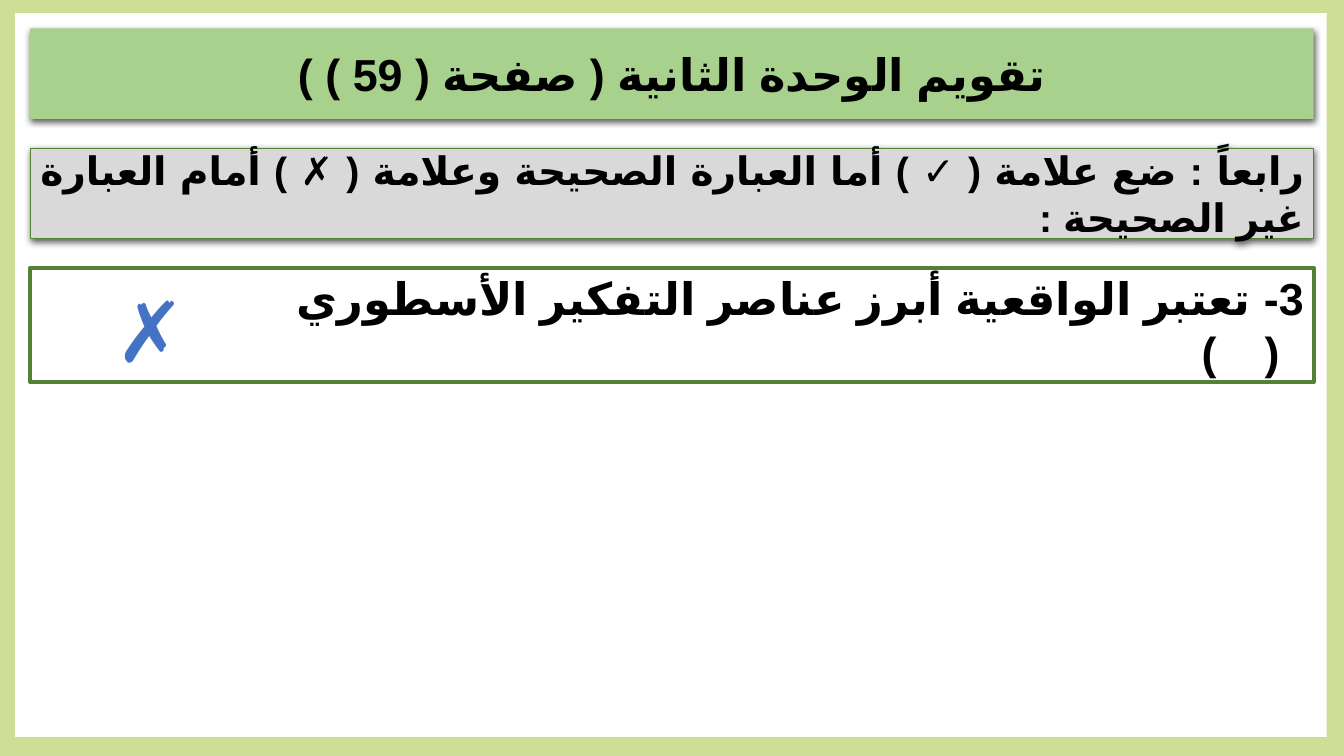
import pptx
import pptx.util
import pptx.dml.color
import pptx.enum.lang
import pptx.enum.shapes
import pptx.enum.text
import pptx.oxml
import pptx.oxml.ns

Pt = pptx.util.Pt
Align = pptx.enum.text.PP_ALIGN
HUES = {"frame": "D0DD96", "page": "FFFFFF", "title": "A9D18E", "task": "D9D9D9",
        "edge": "548235", "ink": "000000", "mark": "4472C4"}
SHADE = ('<a:effectLst %s><a:outerShdw blurRad="57150" dist="19050" dir="5400000" '
         'algn="ctr" rotWithShape="0"><a:srgbClr val="000000"><a:alpha val="63000"/>'
         '</a:srgbClr></a:outerShdw></a:effectLst>' % pptx.oxml.ns.nsdecls("a"))
TABS = '<a:tabLst %s>%s</a:tabLst>'
SCRIPT = '<a:cs %s typeface="Arial"/>' % pptx.oxml.ns.nsdecls("a")


def hue(name):
    """Return the named colour."""
    return pptx.dml.color.RGBColor.from_string(HUES[name])


def panel(slide, box, fill, edge=0, shade=False):
    """Draw a filled rectangle with an optional edge and shadow."""
    kind = pptx.enum.shapes.MSO_SHAPE.RECTANGLE
    shape = slide.shapes.add_shape(kind, *map(Pt, box))
    shape.fill.solid()
    shape.fill.fore_color.rgb = hue(fill)
    if edge:
        shape.line.color.rgb = hue("edge")
        shape.line.width = Pt(edge)
    else:
        shape.line.fill.background()
    shape.shadow.inherit = False
    if shade:
        props = shape._element.spPr
        old = props.find(pptx.oxml.ns.qn("a:effectLst"))
        props.replace(old, pptx.oxml.parse_xml(SHADE))
    return shape


def write(shape, text, size, align=None, ink="ink"):
    """Write one bold paragraph into a shape."""
    frame = shape.text_frame
    frame.word_wrap = True
    para = frame.paragraphs[0]
    para.text = text
    para.alignment = align
    para.font.name = "Calibri"
    para.font.size = Pt(size)
    para.font.bold = True
    para.font.color.rgb = hue(ink)
    return para


def arab(shape, text, size, align, rtl=True, tabs=()):
    """Write one Arabic paragraph into a shape."""
    para = write(shape, text, size, align)
    para.space_before = Pt(10)
    for run in para.runs:
        run.font.language_id = pptx.enum.lang.MSO_LANGUAGE_ID.ARABIC
        run._r.get_or_add_rPr().append(pptx.oxml.parse_xml(SCRIPT))
    props = para._p.get_or_add_pPr()
    if rtl:
        props.set("rtl", "1")
    if tabs:
        stops = "".join('<a:tab pos="%d" algn="l"/>' % Pt(pos) for pos in tabs)
        node = pptx.oxml.parse_xml(TABS % (pptx.oxml.ns.nsdecls("a"), stops))
        props.find(pptx.oxml.ns.qn("a:defRPr")).addprevious(node)


def back(slide, box):
    """Draw the coloured frame and the white page inside it."""
    left, top, wide, high = box
    panel(slide, box, "frame")
    panel(slide, (left + 10.8, top + 9.4, wide - 23.1, high - 23.1), "page")


def title(slide, box):
    """Draw the title bar."""
    bar = panel(slide, box, "title", shade=True)
    arab(bar, "تقويم الوحدة الثانية ( صفحة ( 59 ) )", 32, Align.CENTER, rtl=False)


def task(slide, box):
    """Draw the bar with the instructions."""
    bar = panel(slide, box, "task", 0.75, True)
    text = "رابعاً : ضع علامة ( ✓ ) أما العبارة الصحيحة وعلامة ( ✗ ) أمام العبارة غير الصحيحة :"
    arab(bar, text, 28, Align.JUSTIFY)


def item(slide, box):
    """Draw the statement with its answer mark."""
    left, top, _, high = box
    bar = panel(slide, box, "page", 3)
    text = "3- تعتبر الواقعية أبرز عناصر التفكير الأسطوري\v\t(\t)"
    arab(bar, text, 32, Align.RIGHT, tabs=(28, 73))
    spot = (left + 54, top + 4.3, 57.6, high - 1.4)
    mark = slide.shapes.add_textbox(*map(Pt, spot))
    write(mark, "✗", 60, ink="mark")


def main():
    """Build the slide and save it."""
    deck = pptx.Presentation()
    wide, high = 960, 540
    deck.slide_width, deck.slide_height = Pt(wide), Pt(high)
    slide = deck.slides.add_slide(deck.slide_layouts[6])
    back(slide, (0, 0, wide, high))
    left, top, gap = 21.6, 20.2, 20.8
    for draw, tall in ((title, 64.8), (task, 64.8), (item, 81.4)):
        draw(slide, (left, top, wide - 2 * left, tall))
        top += tall + gap
    deck.save("out.pptx")


if __name__ == "__main__":
    main()
